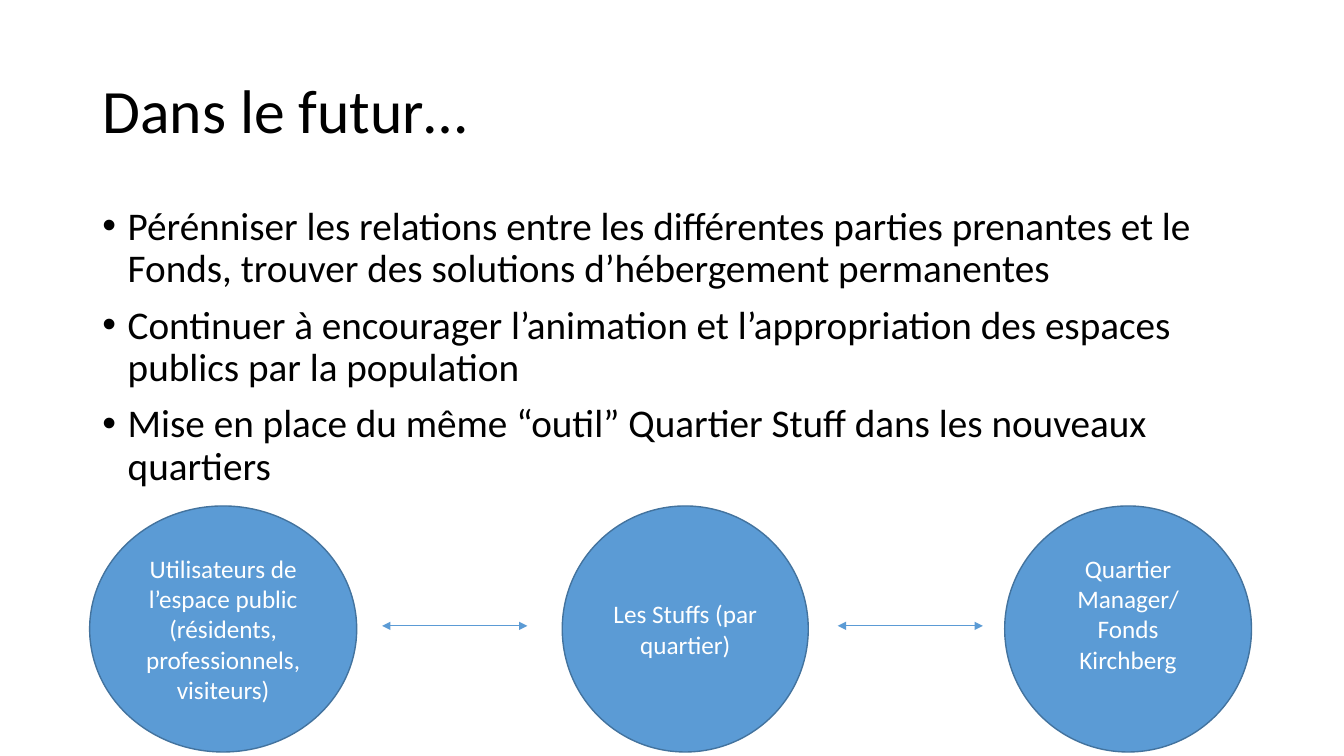
from lxml import etree
from pptx import Presentation
from pptx import util as u
from pptx.dml.color import RGBColor
from pptx.enum import shapes, text
from pptx.oxml.ns import qn


def rgb(value):
    return RGBColor.from_string(value)


def style(p, size, color):
    for r in p.runs:
        r.font.size = u.Pt(size)
        r.font.name = "Calibri"
        r.font.color.rgb = rgb(color)


prs = Presentation()
prs.slide_width, prs.slide_height = u.Cm(33.87), u.Cm(19.05)
s = prs.slides.add_slide(prs.slide_layouts[6])

title = s.shapes.add_textbox(u.Cm(2.33), u.Cm(1.01), u.Cm(29.21), u.Cm(3.68))
tf = title.text_frame
tf.word_wrap = True
tf.vertical_anchor = text.MSO_ANCHOR.MIDDLE
tf.text = "Dans le futur…"
tf.paragraphs[0].line_spacing = 0.9
style(tf.paragraphs[0], 44, "000000")

goals = [
    "Pérénniser les relations entre les différentes parties prenantes et le Fonds, trouver des solutions d’hébergement permanentes",
    "Continuer à encourager l’animation et l’appropriation des espaces publics par la population",
    "Mise en place du même “outil” Quartier Stuff dans les nouveaux quartiers",
]
body = s.shapes.add_textbox(u.Cm(2.33), u.Cm(5.08), u.Cm(29.21), u.Cm(7.67))
tf = body.text_frame
tf.word_wrap = True
tf.text = "\n".join(goals)
for i, p in enumerate(tf.paragraphs):
    pPr = p._p.get_or_add_pPr()
    pPr.set("marL", str(u.Cm(0.64)))
    pPr.set("indent", str(-u.Cm(0.64)))
    etree.SubElement(pPr, qn("a:buFont")).set("typeface", "Arial")
    etree.SubElement(pPr, qn("a:buChar")).set("char", "•")
    p.line_spacing = 0.9
    if i:
        p.space_before = u.Pt(10)
    style(p, 28, "000000")

actors = [
    (2.26, 6.73, 0.13, "Utilisateurs de l’espace public\n(résidents, professionnels, visiteurs)"),
    (14.17, 6.2, 0.13, "Les Stuffs (par quartier)"),
    (25.32, 6.22, 0.9, "Quartier Manager/ Fonds Kirchberg"),
]
for left, width, bottom, label in actors:
    sp = s.shapes.add_shape(shapes.MSO_SHAPE.OVAL, u.Cm(left), u.Cm(12.75), u.Cm(width), u.Cm(6.2))
    sp.shadow.inherit = False
    sp.fill.solid()
    sp.fill.fore_color.rgb = rgb("5B9BD5")
    sp.line.color.rgb = rgb("43739E")
    sp.line.width = u.Pt(1)
    tf = sp.text_frame
    tf.word_wrap = True
    tf.vertical_anchor = text.MSO_ANCHOR.MIDDLE
    tf.margin_bottom = u.Cm(bottom)
    tf.text = label
    for p in tf.paragraphs:
        p.alignment = text.PP_ALIGN.CENTER
        style(p, 18, "FFFFFF")

for left in (9.63, 21.11):
    arrow = s.shapes.add_connector(
        shapes.MSO_CONNECTOR.STRAIGHT, u.Cm(left), u.Cm(15.77), u.Cm(left + 3.66), u.Cm(15.77)
    )
    arrow.line.color.rgb = rgb("5B9BD5")
    arrow.line.width = u.Pt(0.5)
    ln = arrow.line._get_or_add_ln()
    for end in ("a:headEnd", "a:tailEnd"):
        etree.SubElement(ln, qn(end)).set("type", "triangle")
    etree.SubElement(arrow._element.spPr, qn("a:effectLst"))

prs.save("out.pptx")
